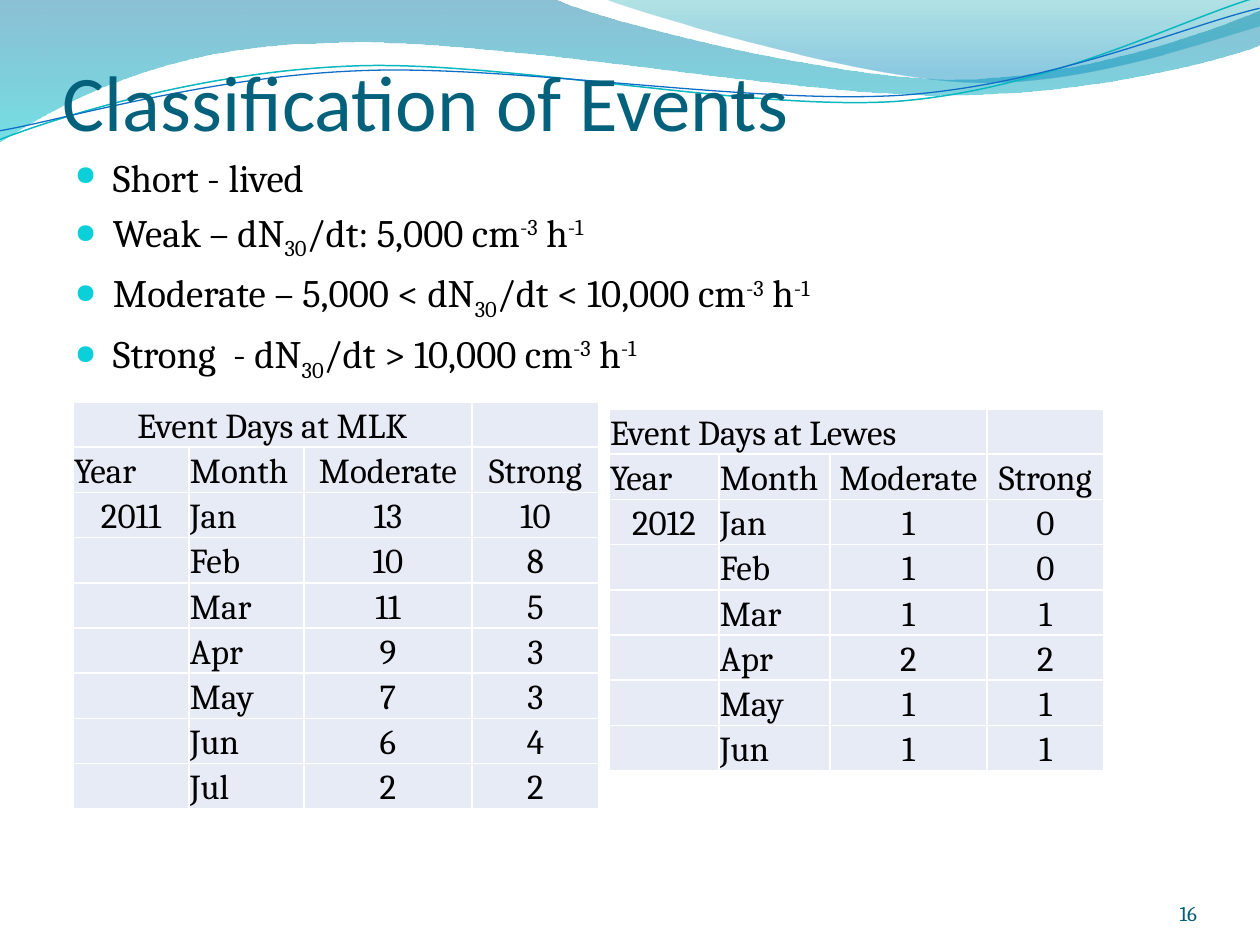
from dataclasses import dataclass
from typing import Optional

import pptx
import pptx.dml.color
import pptx.enum.text
import pptx.oxml
import pptx.oxml.ns
import pptx.util

EMU_PER_PX = 914400 / 126
ALIGN = pptx.enum.text.PP_ALIGN
BOTTOM = pptx.enum.text.MSO_ANCHOR.BOTTOM
TOP = pptx.enum.text.MSO_ANCHOR.TOP
SUB, SUPER = -25000, 30000


@dataclass
class Stop:
    position: float
    color: str
    alpha: int


@dataclass
class Wave:
    start: tuple
    segments: list
    stops: Optional[list] = None
    line: str = ""
    width: float = 0
    rotation: float = 0


@dataclass
class EventTable:
    left: int
    top: int
    widths: list
    title: str
    title_align: int
    year: str
    counts: list


def px(n: float) -> int:
    return round(n * EMU_PER_PX)


def rgb(color: str) -> pptx.dml.color.RGBColor:
    return pptx.dml.color.RGBColor.from_string(color)


def xml(tag: str, body: str = "", **attrs):
    attributes = "".join(f' {k}="{v}"' for k, v in attrs.items())
    ns = pptx.oxml.ns.nsdecls("a")
    return pptx.oxml.parse_xml(f"<a:{tag} {ns}{attributes}>{body}</a:{tag}>")


def bend_segments(sp, segments: list) -> None:
    nodes = iter(sp._element.xpath(".//a:path/a:lnTo"))
    for segment in segments:
        group = [next(nodes) for _ in segment]
        if len(group) == 3:
            curve = xml("cubicBezTo")
            group[0].addprevious(curve)
            for node in group:
                curve.append(node[0])
                node.getparent().remove(node)


def draw_wave(s, wave: Wave) -> None:
    points = [wave.start] + [point for segment in wave.segments for point in segment]
    (x, y), *rest = [(px(a), px(b)) for a, b in points]
    builder = s.shapes.build_freeform(x, y, scale=1.0)
    builder.add_line_segments(rest, close=wave.stops is not None)
    sp = builder.convert_to_shape()
    bend_segments(sp, wave.segments)
    sp.shadow.inherit = False
    sp.rotation = wave.rotation
    if wave.stops is None:
        sp.fill.background()
        sp.line.color.rgb = rgb(wave.line)
        sp.line.width = pptx.util.Pt(wave.width)
        return
    sp.line.fill.background()
    sp.fill.gradient()
    sp.fill.gradient_angle = 270
    for gs, stop in zip(sp.fill.gradient_stops, wave.stops):
        gs.position = stop.position
        gs.color.rgb = rgb(stop.color)
    for node, stop in zip(sp._element.xpath(".//a:gs/a:srgbClr"), wave.stops):
        node.append(xml("alpha", val=stop.alpha * 1000))


def style(p, size: float, font: str, color: str, align=ALIGN.LEFT) -> None:
    p.alignment = align
    p.font.size = pptx.util.Pt(size)
    p.font.name = font
    p.font.color.rgb = rgb(color)


def add_text_box(s, box: tuple, insets: tuple, anchor):
    tf = s.shapes.add_textbox(*map(px, box)).text_frame
    tf.word_wrap = True
    tf.vertical_anchor = anchor
    tf.margin_left, tf.margin_top, tf.margin_right, tf.margin_bottom = map(px, insets)
    return tf


def draw_bullets(s, bullets: list) -> None:
    tf = add_text_box(s, (63, 148, 809, 284), (12, 6, 12, 6), TOP)
    for i, runs in enumerate(bullets):
        p = tf.add_paragraph() if i else tf.paragraphs[0]
        style(p, 22.2, "Cambria", "000000")
        p.space_before = pptx.util.Pt(4.4)
        pPr = p._p.get_or_add_pPr()
        pPr.set("marL", str(px(38)))
        pPr.set("indent", str(-px(38)))
        marks = [xml("buClr", '<a:srgbClr val="0BD0D9"/>'),
                 xml("buSzPct", val=70000), xml("buChar", char="●")]
        for mark in marks:
            pPr.find(pptx.oxml.ns.qn("a:defRPr")).addprevious(mark)
        for text, baseline in runs:
            r = p.add_run()
            r.text = text
            if baseline:
                r._r.get_or_add_rPr().set("baseline", str(baseline))


def draw_cell(cell, text: str, align) -> None:
    cell.text = text
    cell.vertical_anchor = BOTTOM
    cell.margin_left = cell.margin_right = cell.margin_top = px(1)
    cell.margin_bottom = 0
    style(cell.text_frame.paragraphs[0], 20, "Cambria", "000000", align)
    cell.fill.solid()
    cell.fill.fore_color.rgb = rgb("E7EBF5")
    tcPr = cell._tc.get_or_add_tcPr()
    for i, side in enumerate(("lnL", "lnR", "lnT", "lnB")):
        fill = '<a:solidFill><a:srgbClr val="FFFFFF"/></a:solidFill>'
        tcPr.insert(i, xml(side, fill, w=12700))


def draw_table(s, t: EventTable) -> None:
    rows = [[t.title, "", "", ""], ["Year", "Month", "Moderate", "Strong"]]
    for i, (month, (moderate, strong)) in enumerate(zip(MONTHS, t.counts)):
        rows.append(["" if i else t.year, month, str(moderate), str(strong)])
    frame = s.shapes.add_table(len(rows), len(t.widths), px(t.left), px(t.top),
                               px(sum(t.widths)), px(45.2 * len(rows)))
    table = frame.table
    for column, width in zip(table.columns, t.widths):
        column.width = px(width)
    for i, row in enumerate(rows):
        for j, text in enumerate(row):
            centred = j > 1 or (j == 0 and i > 1)
            align = ALIGN.CENTER if centred else ALIGN.LEFT
            draw_cell(table.cell(i, j), text, align if i else t.title_align)
    table.cell(0, 0).merge(table.cell(0, 2))


MONTHS = ["Jan", "Feb", "Mar", "Apr", "May", "Jun", "Jul"]
RATE = [("30", SUB)]
UNIT = [("-3", SUPER), (" h", 0), ("-1", SUPER)]
BULLETS = [
    [("Short - lived", 0)],
    [("Weak – dN", 0), *RATE, ("/dt: 5,000 cm", 0), *UNIT],
    [("Moderate – 5,000 < dN", 0), *RATE, ("/dt < 10,000 cm", 0), *UNIT],
    [("Strong  - dN", 0), *RATE, ("/dt > 10,000 cm", 0), *UNIT],
]
WAVES = [
    Wave((0, 0), [[(554, -1)], [(600, 21), (837, 79), (955, 79)],
                  [(1075, 79), (1207, 33), (1260, 11)], [(1261, 45)],
                  [(1239, 55), (1096, 96), (940, 95)], [(784, 95), (481, 35), (324, 43)],
                  [(163, 45), (58, 105), (-1, 142)], [(0, 0)]],
         stops=[Stop(0, "0074A1", 45), Stop(1, "00C6CF", 55)]),
    Wave((604, -1), [[(641, 14), (859, 78), (969, 82)],
                     [(1079, 87), (1211, 40), (1260, 26)], [(1260, 0)], [(604, -1)]],
         stops=[Stop(0, "00A1A9", 30), Stop(0.8, "008BBF", 45)]),
    Wave((-3, 110), [[(58, 90), (199, 52), (350, 53)], [(499, 53), (745, 117), (896, 114)],
                     [(1049, 109), (1184, 45), (1260, 27)]],
         line="0AB8BF", width=0.85, rotation=357.3),
    Wave((-2, 101), [[(57, 94), (207, 57), (357, 58)], [(509, 58), (750, 111), (902, 108)],
                     [(1052, 104), (1187, 52), (1262, 38)]],
         line="0F6FC6", width=0.75, rotation=357.3),
]
TABLES = [
    EventTable(73, 402, [116, 115, 168, 127], "Event Days at MLK", ALIGN.CENTER, "2011",
               [(13, 10), (10, 8), (11, 5), (9, 3), (7, 3), (6, 4), (2, 2)]),
    EventTable(609, 409, [110, 111, 157, 117], "Event Days at Lewes", ALIGN.LEFT, "2012",
               [(1, 0), (1, 0), (1, 1), (2, 2), (1, 1), (1, 1)]),
]


def main() -> None:
    prs = pptx.Presentation()
    prs.slide_width, prs.slide_height = px(1260), px(945)
    s = prs.slides.add_slide(prs.slide_layouts[6])
    for wave in WAVES:
        draw_wave(s, wave)
    p = add_text_box(s, (63, 53, 1134, 94), (0, 6, 0, 0), BOTTOM).paragraphs[0]
    p.text = "Classification of Events"
    style(p, 45, "Calibri", "04617B")
    draw_bullets(s, BULLETS)
    p = add_text_box(s, (1092, 876, 105, 50), (0, 0, 0, 0), BOTTOM).paragraphs[0]
    p.text = "16"
    style(p, 12, "Cambria", "045D75", ALIGN.RIGHT)
    for table in TABLES:
        draw_table(s, table)
    prs.save("out.pptx")


if __name__ == "__main__":
    main()
